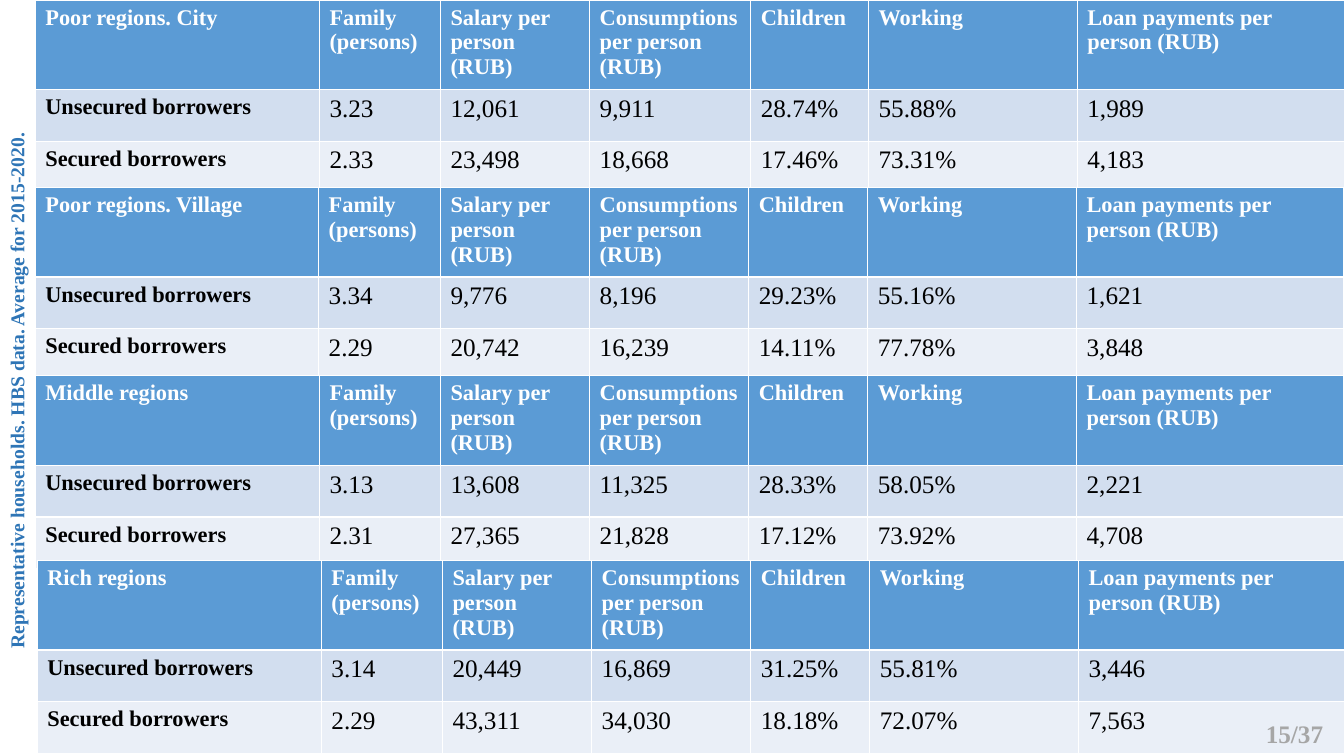
from pptx import Presentation
from pptx.dml.color import RGBColor
from pptx.enum import text
from pptx.util import Cm, Pt

TITLE = "Representative households. HBS data. Average for 2015-2020."
PAGE = "15/37"
MEASURES = ["Family (persons)", "Salary per person (RUB)", "Consumptions per person (RUB)",
            "Children", "Working", "Loan payments per person (RUB)"]
BORROWERS = ["Unsecured borrowers", "Secured borrowers"]
COLUMNS = [7.16, 3.05, 3.76, 4.01, 3.0, 5.26, 6.73]
CITY_COLUMNS = [7.16, 3.05, 3.76, 4.06, 2.97, 5.26, 6.73]
VILLAGE_COLUMNS = [7.14, 3.07, 3.76, 4.01, 3.0, 5.26, 6.73]
ROWS = [2.26, 1.3, 1.3]
ROW_FILLS = ["5B9BD5", "D2DEEF", "EAEFF7"]
REGIONS = [
    ("Poor regions. City", 0.89, 0, CITY_COLUMNS, [
        ["3.23", "12,061", "9,911", "28.74%", "55.88%", "1,989"],
        ["2.33", "23,498", "18,668", "17.46%", "73.31%", "4,183"]]),
    ("Poor regions. Village", 0.89, 4.72, VILLAGE_COLUMNS, [
        ["3.34", "9,776", "8,196", "29.23%", "55.16%", "1,621"],
        ["2.29", "20,742", "16,239", "14.11%", "77.78%", "3,848"]]),
    ("Middle regions", 0.89, 9.47, COLUMNS, [
        ["3.13", "13,608", "11,325", "28.33%", "58.05%", "2,221"],
        ["2.31", "27,365", "21,828", "17.12%", "73.92%", "4,708"]]),
    ("Rich regions", 0.94, 14.12, COLUMNS, [
        ["3.14", "20,449", "16,869", "31.25%", "55.81%", "3,446"],
        ["2.29", "43,311", "34,030", "18.18%", "72.07%", "7,563"]]),
]


def color(value):
    return RGBColor.from_string(value)


def write(frame, words, size, ink, bold=True):
    frame.text = words
    font = frame.paragraphs[0].font
    font.name = "Times New Roman"
    font.size = Pt(size)
    font.bold = bold
    font.color.rgb = color(ink)


def add_region(slide, name, left, top, columns, values):
    table = slide.shapes.add_table(len(ROWS), len(columns), Cm(left), Cm(top),
                                   Cm(sum(columns)), Cm(sum(ROWS))).table
    for column, width in zip(table.columns, columns):
        column.width = Cm(width)
    content = [[name] + MEASURES]
    content += [[borrower] + line for borrower, line in zip(BORROWERS, values)]
    for i, line in enumerate(content):
        table.rows[i].height = Cm(ROWS[i])
        for j, words in enumerate(line):
            cell = table.cell(i, j)
            cell.fill.solid()
            cell.fill.fore_color.rgb = color(ROW_FILLS[i])
            label = i == 0 or j == 0
            write(cell.text_frame, words, 16 if label else 18,
                  "FFFFFF" if i == 0 else "000000", label)


def main():
    presentation = Presentation()
    presentation.slide_width, presentation.slide_height = Cm(33.87), Cm(19.05)
    slide = presentation.slides.add_slide(presentation.slide_layouts[5])

    title = slide.shapes.title
    title.left, title.top, title.width, title.height = Cm(-14.94), Cm(9.42), Cm(30.71), Cm(0.86)
    title.rotation = 270
    title.text_frame.auto_size = text.MSO_AUTO_SIZE.NONE
    write(title.text_frame, TITLE, 14, "2E75B6")
    title.text_frame.paragraphs[0].alignment = text.PP_ALIGN.CENTER

    for region in REGIONS:
        add_region(slide, *region)

    page = slide.shapes.add_textbox(Cm(31.65), Cm(17.98), Cm(2.21), Cm(1.02))
    page.text_frame.word_wrap = True
    write(page.text_frame, PAGE, 18, "A6A6A6")
    presentation.save("out.pptx")


if __name__ == "__main__":
    main()
